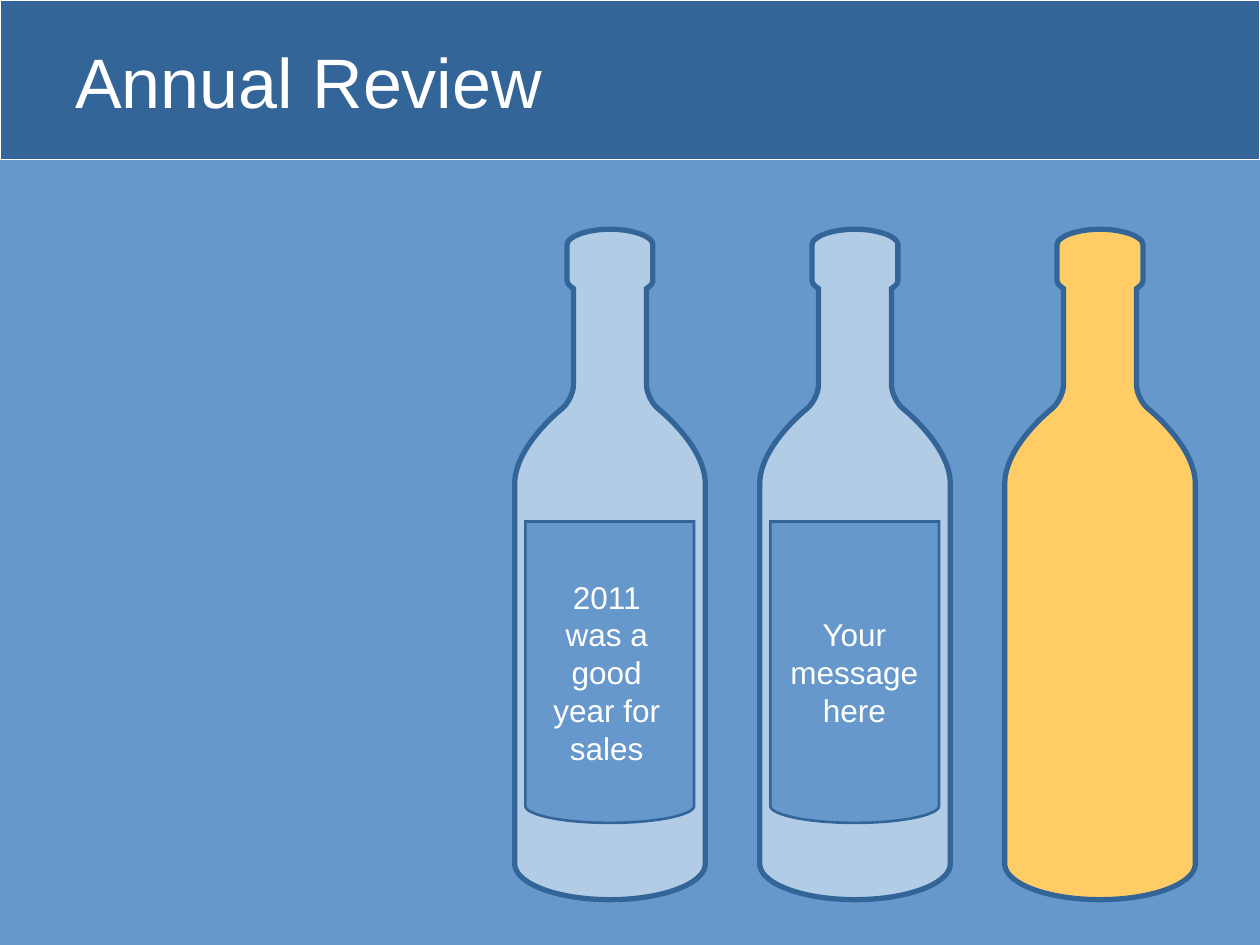
import lxml.etree
import pptx
import pptx.dml.color
import pptx.enum.shapes
import pptx.enum.text
import pptx.oxml.ns
import pptx.util

Pt = pptx.util.Pt
qn = pptx.oxml.ns.qn
RGBColor = pptx.dml.color.RGBColor
RECTANGLE = pptx.enum.shapes.MSO_SHAPE.RECTANGLE
PP_ALIGN = pptx.enum.text.PP_ALIGN
MSO_ANCHOR = pptx.enum.text.MSO_ANCHOR

WHITE = RGBColor(0xFF, 0xFF, 0xFF)
NAVY = RGBColor(0x33, 0x65, 0x99)
BLUE = RGBColor(0x66, 0x98, 0xCC)
PALE = RGBColor(0xB3, 0xCC, 0xE6)
YELLOW = RGBColor(0xFF, 0xCC, 0x66)

# Right halves, top to bottom: x from the bottle's axis, y from the slide's top.
# After the start, one pair is a straight step and three pairs are a Bezier curve.
BOTTLE = [
    [(0, 131)],
    [(13.7, 131), (24.5, 135.4), (24.5, 139.7)],
    [(24.5, 160.6)],
    [(24.5, 162), (23, 163.4), (20.9, 164.9)],
    [(20.9, 220.3)],
    [(20.9, 224.6), (24.1, 231.1), (28, 234)],
    [(28, 234), (53.3, 254.2), (54.4, 275)],
    [(54.4, 494.6)],
    [(53, 505.4), (29.2, 514.1), (0, 514.1)],
]
LABEL = [
    [(0, 298)],
    [(48.2, 298)],
    [(48.2, 460.8)],
    [(47.5, 465.8), (26.3, 470.2), (0, 470.2)],
]


def add_symmetric(s, half, axis, fill, line_width):
    """Draw a closed outline from its right half and the mirror image of it."""
    right = [point for segment in half for point in segment]
    points = right + [(-x, y) for x, y in right[-2::-1]]
    sizes = [len(segment) for segment in half[1:]]
    vertices = [(Pt(axis + x), Pt(y)) for x, y in points]
    builder = s.shapes.build_freeform(*vertices[0])
    builder.add_line_segments(vertices[1:], close=True)
    sp = builder.convert_to_shape()

    # Turn each run of three steps that belongs to a curve into one curve.
    steps = iter(list(sp._element.iter(qn("a:lnTo"))))
    for size in sizes + sizes[::-1]:
        first = next(steps)
        if size == 3:
            first.tag = qn("a:cubicBezTo")
            for step in (next(steps), next(steps)):
                first.append(step[0])
                step.getparent().remove(step)

    sp.shadow.inherit = False
    sp.fill.solid()
    sp.fill.fore_color.rgb = fill
    sp.line.color.rgb = NAVY
    sp.line.width = Pt(line_width)
    ln = sp._element.spPr.find(qn("a:ln"))
    lxml.etree.SubElement(ln, qn("a:miter"), lim="800000")


def set_text(sp, text, size, align):
    tf = sp.text_frame
    tf.word_wrap = True
    tf.vertical_anchor = MSO_ANCHOR.MIDDLE
    p = tf.paragraphs[0]
    p.text = text
    p.alignment = align
    r = p.runs[0]
    r.font.name = "Arial"
    r.font.size = Pt(size)
    r.font.color.rgb = WHITE


prs = pptx.Presentation()
prs.slide_width, prs.slide_height = Pt(720), Pt(540)
s = prs.slides.add_slide(prs.slide_layouts[6])
s.background.fill.solid()
s.background.fill.fore_color.rgb = BLUE

banner = s.shapes.add_shape(RECTANGLE, 0, 0, Pt(720), Pt(91.4))
banner.shadow.inherit = False
banner.fill.solid()
banner.fill.fore_color.rgb = NAVY
banner.line.color.rgb = WHITE
banner.line.width = Pt(0.75)

title = s.shapes.add_textbox(Pt(36), Pt(14.8), Pt(638.6), Pt(62.6))
set_text(title, "Annual Review", 40, PP_ALIGN.LEFT)

FIRST_AXIS, BOTTLE_STEP = 348.6, 140
add_symmetric(s, BOTTLE, FIRST_AXIS + 2 * BOTTLE_STEP, YELLOW, 3)

messages = [
    ("2011 was a good year for sales", 303.1, 87.1),
    ("Your message here", 443.2, 90),
]
for i, (message, left, width) in enumerate(messages):
    axis = FIRST_AXIS + i * BOTTLE_STEP
    add_symmetric(s, BOTTLE, axis, PALE, 3)
    add_symmetric(s, LABEL, axis - 0.2, BLUE, 1.5)
    sp = s.shapes.add_shape(RECTANGLE, Pt(left), Pt(307), Pt(width), Pt(154.1))
    sp.shadow.inherit = False
    sp.fill.solid()
    sp.fill.fore_color.rgb = BLUE
    sp.line.fill.background()
    set_text(sp, message, 18, PP_ALIGN.CENTER)

prs.save("out.pptx")
